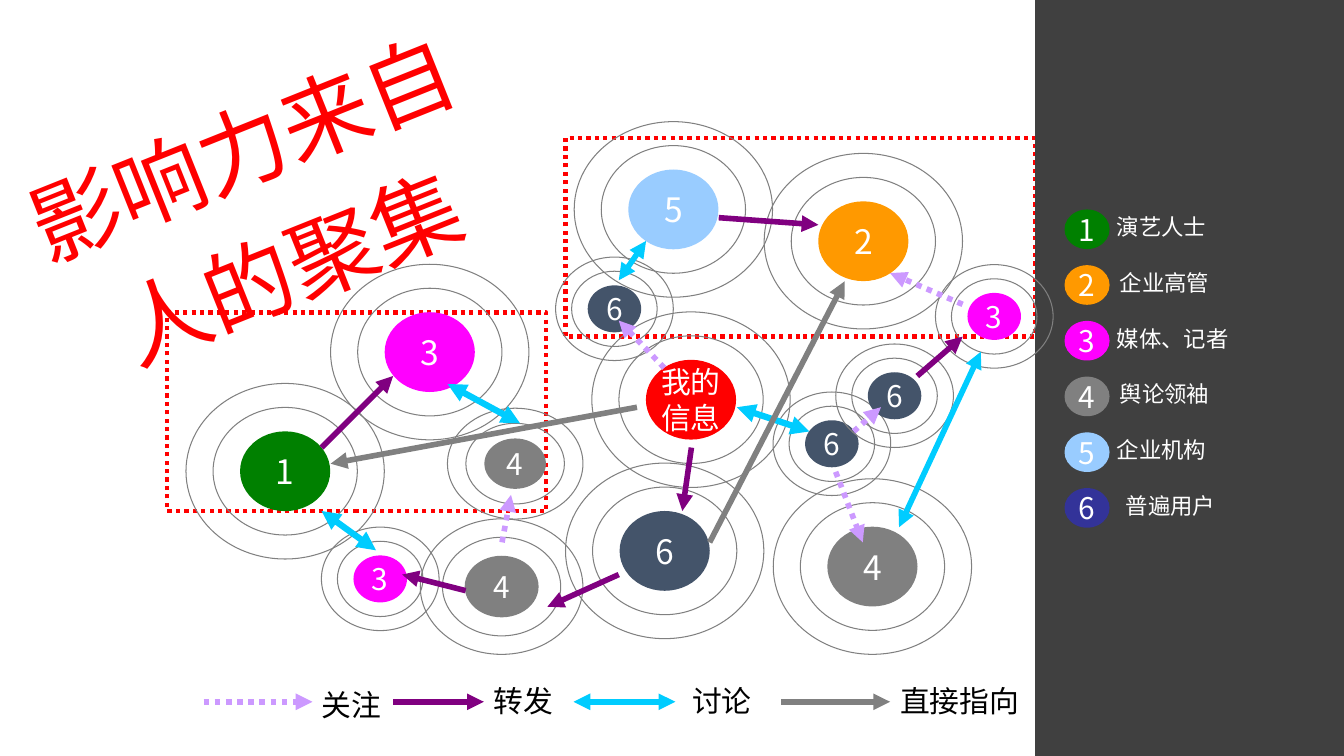
from pptx import Presentation
from pptx.dml.color import RGBColor
from pptx.enum import dml, shapes, text
from pptx.oxml.ns import qn
from pptx.util import Pt
from lxml import etree

COLORS = {
    "white": "FFFFFF", "black": "000000", "red": "FF0000", "green": "008000",
    "orange": "FF9900", "magenta": "FF00FF", "gray": "808080", "sky": "99CCFF",
    "slate": "44546A", "indigo": "333399", "panel": "404040",
    "lilac": "CC99FF", "purple": "800080", "cyan": "00CCFF",
}
FONT = "Noto Sans CJK SC"
TITLE = "影响力来自\n人的聚集"

# Core sizes of the people circles; rings grow by fixed ratios
LARGE, MEDIUM, OVAL, SMALL = (64.4, 57), (52.8, 44), (44, 36), (38.2, 33.6)
RING_RATIOS = (1.6, 2.2)

# label, colour, centre, core size, text size
NODES = [
    ("我的\n信息", "red", (493.6, 285.5), LARGE, 21.3),
    ("6", "slate", (474.8, 393.5), LARGE, 24),
    ("4", "gray", (623.2, 404.7), LARGE, 24),
    ("3", "magenta", (307, 251.5), LARGE, 24),
    ("1", "green", (203.7, 336.6), LARGE, 24),
    ("2", "orange", (616.7, 172.3), LARGE, 24),
    ("5", "sky", (481, 149.6), LARGE, 24),
    ("6", "slate", (594.2, 317), SMALL, 21.3),
    ("6", "slate", (639, 282.7), SMALL, 21.3),
    ("4", "gray", (358.3, 419), MEDIUM, 21.3),
    ("3", "magenta", (271.6, 413.5), SMALL, 21.3),
    ("4", "gray", (368, 331.2), OVAL, 21.3),
    ("6", "slate", (438.9, 220.6), SMALL, 21.3),
    ("3", "magenta", (710.2, 226), SMALL, 21.3),
]

FRAMES = [(403.9, 98.6, 335.5, 141.8), (119.5, 223.2, 270.7, 141.8)]
PANEL = (739.4, 0, 220.6, 540)

# colour, dotted, arrowhead at both ends
LINK_STYLES = {
    "关注": ("lilac", True, False),
    "转发": ("purple", False, False),
    "讨论": ("cyan", False, True),
    "直接指向": ("gray", False, False),
}

# kind, start, end, line width where it is not the usual one
LINKS = [
    ("关注", (474.5, 262.8), (442, 229)),
    ("关注", (596.9, 337), (616.3, 387.4)),
    ("关注", (609.8, 308.2), (629.3, 290.9)),
    ("关注", (687.6, 217.4), (635.8, 195.1)),
    ("关注", (358.6, 387.4), (365, 353.5)),
    ("转发", (513.4, 155.5), (584.6, 160.6)),
    ("转发", (442, 410.4), (391, 433.4)),
    ("转发", (493.9, 319.7), (487.4, 365)),
    ("转发", (332.6, 421.9), (287.3, 410.4)),
    ("转发", (229.7, 319.7), (280.8, 268.6)),
    ("转发", (655.2, 268.6), (687.6, 240.5)),
    ("讨论", (526.3, 290.9), (578.2, 308.2), 4.5),
    ("讨论", (319.7, 274.3), (371.5, 302.4), 4.5),
    ("讨论", (229.7, 365), (268.6, 393.1), 4.5),
    ("讨论", (461.5, 172.1), (442, 200.2)),
    ("讨论", (700.6, 251.3), (642.2, 376.6)),
    ("直接指向", (455, 290.9), (236.2, 331.2)),
    ("直接指向", (506.9, 387.4), (603.4, 200.9)),
]

# kind, line start and end, left and top of the label, label width
LINK_KEY_Y = 501.3
LINK_KEY = [
    ("关注", 145.4, 223.2, 222.5, 486.7, 90.7),
    ("转发", 280.8, 345.6, 345.6, 483.8, 90.7),
    ("讨论", 482.4, 409.7, 487.4, 483.8, 90.7),
    ("直接指向", 558, 635.8, 635.8, 483.8, 135.4),
]

# colour, role, left of the label
ROLE_KEY = [
    ("green", "演艺人士", 790.6), ("orange", "企业高管", 792.7),
    ("magenta", "媒体、记者", 790.6), ("gray", "舆论领袖", 792.7),
    ("sky", "企业机构", 790.6), ("indigo", "普遍用户", 797),
]
ROLE_X, ROLE_Y, ROLE_STEP = 776.5, 163.8, 39.8

deck = Presentation()
deck.slide_width, deck.slide_height = Pt(960), Pt(540)
page = deck.slides.add_slide(deck.slide_layouts[5])


def rgb(name):
    return RGBColor.from_string(COLORS[name])


def write(frame, words, size, color, font=FONT, align=None, spacing=None):
    for number, line in enumerate(words.split("\n")):
        para = frame.paragraphs[0] if number == 0 else frame.add_paragraph()
        para.alignment, para.line_spacing = align, spacing
        span = para.add_run()
        span.text = line
        span.font.size, span.font.name = Pt(size), font
        span.font.color.rgb = rgb(color)
        if font == FONT:
            etree.SubElement(span.font._element, qn("a:ea"), typeface=font)


def add_label(words, left, top, width, height, **style):
    box = page.shapes.add_textbox(Pt(left), Pt(top), Pt(width), Pt(height))
    box.text_frame.word_wrap = True
    write(box.text_frame, words, **style)


def add_figure(kind, left, top, width, height, fill=None, line=None, weight=0.75):
    figure = page.shapes.add_shape(kind, Pt(left), Pt(top), Pt(width), Pt(height))
    figure.shadow.inherit = False
    if fill:
        figure.fill.solid()
        figure.fill.fore_color.rgb = rgb(fill)
    else:
        figure.fill.background()
    if line:
        figure.line.color.rgb = rgb(line)
        figure.line.width = Pt(weight)
    else:
        figure.line.fill.background()
    return figure


def add_oval(center, size, ratio=1, **style):
    width, height = (side * ratio for side in size)
    return add_figure(shapes.MSO_SHAPE.OVAL, center[0] - width / 2,
                      center[1] - height / 2, width, height, **style)


def add_disc(label, color, center, size, text_size):
    frame = add_oval(center, size, fill=color).text_frame
    frame.word_wrap = False
    frame.vertical_anchor = text.MSO_ANCHOR.MIDDLE
    frame.margin_left = frame.margin_right = frame.margin_top = frame.margin_bottom = 0
    write(frame, label, text_size, "white", align=text.PP_ALIGN.CENTER)


def add_link(kind, start, end, width=4):
    color, dotted, both_ends = LINK_STYLES[kind]
    link = page.shapes.add_connector(shapes.MSO_CONNECTOR.STRAIGHT,
                                     *(Pt(value) for value in start + end))
    link.line.color.rgb = rgb(color)
    link.line.width = Pt(width)
    if dotted:
        link.line.dash_style = dml.MSO_LINE.ROUND_DOT
    outline = link.line._get_or_add_ln()
    for tip in ("a:headEnd", "a:tailEnd") if both_ends else ("a:tailEnd",):
        etree.SubElement(outline, qn(tip), type="triangle")
    etree.SubElement(link.element.spPr, qn("a:effectLst"))


for area in FRAMES:
    frame_box = add_figure(shapes.MSO_SHAPE.RECTANGLE, *area, line="red", weight=3)
    frame_box.line.dash_style = dml.MSO_LINE.ROUND_DOT
add_figure(shapes.MSO_SHAPE.RECTANGLE, *PANEL, fill="panel")

for node in NODES:
    add_disc(*node)
    for ratio in RING_RATIOS:
        add_oval(node[2], node[3], ratio, line="gray")

for link_data in LINKS:
    add_link(*link_data)

for kind, start_x, end_x, left, top, width in LINK_KEY:
    add_link(kind, (start_x, LINK_KEY_Y), (end_x, LINK_KEY_Y))
    add_label(kind, left, top, width, 33, size=21.3, color="black")

for index, (color, role, left) in enumerate(ROLE_KEY):
    y = ROLE_Y + index * ROLE_STEP
    add_disc(str(index + 1), color, (ROLE_X, y), (32.2, 28.3), 21.3)
    add_label(role, left, y - 15, 150.5, 26.6, size=16, color="white")

title = page.shapes.title
title.left, title.top, title.width, title.height = Pt(-23.8), Pt(44.6), Pt(422), Pt(193.7)
title.rotation = 338.1
title.text_frame.word_wrap = True
title.text_frame.auto_size = text.MSO_AUTO_SIZE.SHAPE_TO_FIT_TEXT
title.text_frame.vertical_anchor = text.MSO_ANCHOR.TOP
write(title.text_frame, TITLE, 64, "red", font="Calibri",
      align=text.PP_ALIGN.CENTER, spacing=1.2)
page.shapes.element.append(title.element)  # bring the title to the front

deck.save("out.pptx")
